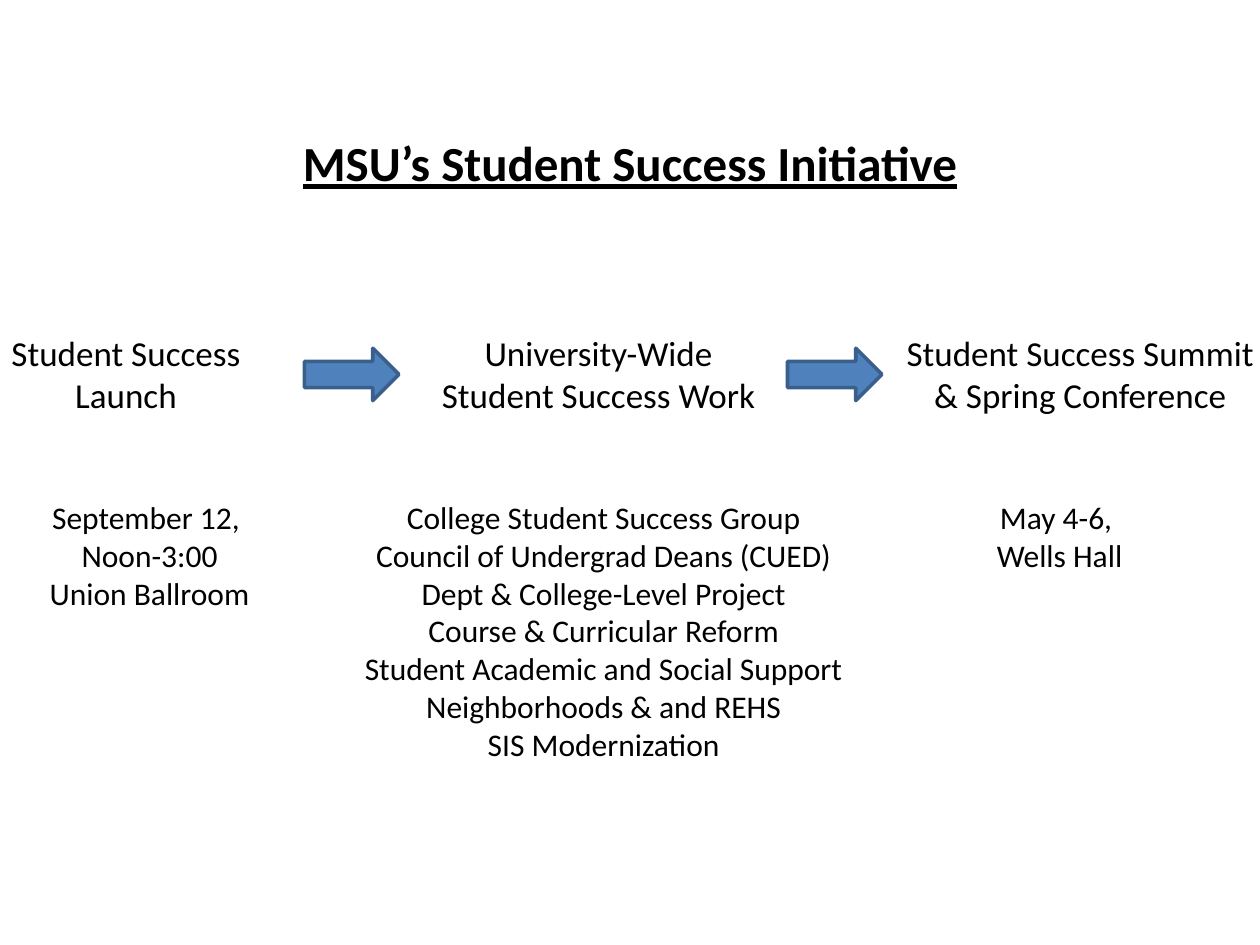
from dataclasses import dataclass

from pptx import Presentation
from pptx.dml.color import RGBColor
from pptx.enum.shapes import MSO_SHAPE
from pptx.enum.text import MSO_ANCHOR, MSO_AUTO_SIZE, PP_ALIGN
from pptx.util import Pt

RIGHT_ARROW = MSO_SHAPE.RIGHT_ARROW
TOP = MSO_ANCHOR.TOP
NO_FIT = MSO_AUTO_SIZE.NONE
CENTER = PP_ALIGN.CENTER
TITLE_ONLY = 5


@dataclass(frozen=True)
class Theme:
    font: str = "Calibri"
    ink: RGBColor = RGBColor(0x00, 0x00, 0x00)
    arrow_fill: RGBColor = RGBColor(0x4F, 0x81, 0xBD)
    arrow_line: RGBColor = RGBColor(0x3A, 0x5F, 0x8C)
    title_size: int = 28
    heading_size: int = 20
    detail_size: int = 18


THEME = Theme()

HEADING_TOP, HEADING_HEIGHT = 186, 55.7
DETAIL_TOP, DETAIL_LINE, DETAIL_PADDING = 281, 21.8, 7.2
ARROW_TOP, ARROW_WIDTH, ARROW_HEIGHT = 199, 54, 30
ARROW_LEFTS = (174, 450)

# Each stage: heading (left, width), heading lines, detail (left, width), detail lines
STAGES = (
    ((-18, 180), ["Student Success Launch"],
     (-1.5, 174), ["September 12, ", "Noon-3:00", "Union Ballroom"]),
    ((240, 204), ["University-Wide", "Student Success Work"],
     (198, 294), ["College Student Success Group",
                  "Council of Undergrad Deans (CUED)",
                  "Dept & College-Level Project",
                  "Course & Curricular Reform",
                  "Student Academic and Social Support",
                  "Neighborhoods & and REHS",
                  "SIS Modernization"]),
    ((510, 214.5), ["Student Success Summit & Spring Conference"],
     (518.5, 174), ["May 4-6, ", "Wells Hall"]),
)


def place(shape, left, top, width, height):
    shape.left, shape.top = Pt(left), Pt(top)
    shape.width, shape.height = Pt(width), Pt(height)


def write_text(shape, lines, size, bold=False, underline=False):
    frame = shape.text_frame
    frame.word_wrap = True
    frame.auto_size = NO_FIT
    frame.vertical_anchor = TOP
    for index, line in enumerate(lines):
        para = frame.paragraphs[0] if index == 0 else frame.add_paragraph()
        para.alignment = CENTER
        span = para.add_run()
        span.text = line
        span.font.name = THEME.font
        span.font.size = Pt(size)
        span.font.bold = bold
        span.font.underline = underline
        span.font.color.rgb = THEME.ink


def add_title(page, left, top, width, height):
    title = page.shapes.title
    place(title, left, top, width, height)
    write_text(title, ["MSU’s Student Success Initiative"],
               size=THEME.title_size, bold=True, underline=True)


def add_text(page, left, top, width, height, lines, size):
    box = page.shapes.add_textbox(Pt(left), Pt(top), Pt(width), Pt(height))
    write_text(box, lines, size=size)


def add_stage(page, heading_span, heading, detail_span, details):
    """Place a stage heading with its details below."""
    left, width = heading_span
    add_text(page, left, HEADING_TOP, width, HEADING_HEIGHT,
             heading, THEME.heading_size)
    left, width = detail_span
    height = DETAIL_LINE * len(details) + DETAIL_PADDING
    add_text(page, left, DETAIL_TOP, width, height, details, THEME.detail_size)


def add_arrow(page, left, top, width, height):
    arrow = page.shapes.add_shape(RIGHT_ARROW, Pt(left), Pt(top), Pt(width), Pt(height))
    arrow.shadow.inherit = False
    arrow.fill.solid()
    arrow.fill.fore_color.rgb = THEME.arrow_fill
    arrow.line.color.rgb = THEME.arrow_line
    arrow.line.width = Pt(2)


def main():
    deck = Presentation()
    deck.slide_width, deck.slide_height = Pt(720), Pt(540)
    page = deck.slides.add_slide(deck.slide_layouts[TITLE_ONLY])
    add_title(page, 12, 72, 696, 75)
    for stage in STAGES:
        add_stage(page, *stage)
    for left in ARROW_LEFTS:
        add_arrow(page, left, ARROW_TOP, ARROW_WIDTH, ARROW_HEIGHT)
    deck.save("out.pptx")


if __name__ == "__main__":
    main()
